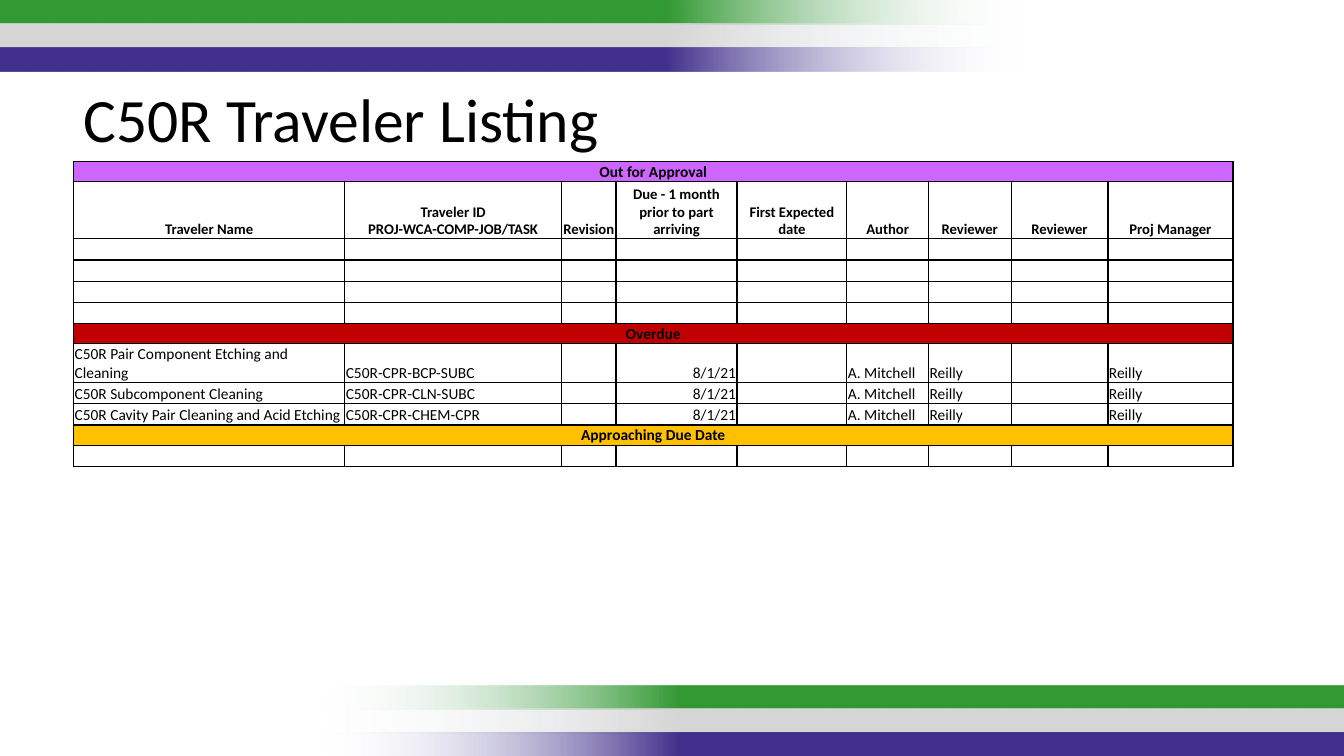
from lxml import etree
from pptx import Presentation
from pptx.dml.color import RGBColor
from pptx.enum import shapes, text
from pptx.oxml import parse_xml
from pptx.oxml.ns import nsdecls, qn
from pptx.util import Inches, Pt

GREEN = RGBColor(0x33, 0x99, 0x33)
GREY = RGBColor(0xD6, 0xD6, 0xD6)
INDIGO = RGBColor(0x42, 0x31, 0x8C)
FADE = RGBColor(0xF7, 0xFA, 0xFD)
BLACK = RGBColor(0, 0, 0)
PURPLE = RGBColor(0xCC, 0x66, 0xFF)
RED = RGBColor(0xC0, 0, 0)
AMBER = RGBColor(0xFF, 0xC0, 0)
FONT = "Calibri"
LEFT, CENTER, RIGHT = text.PP_ALIGN.LEFT, text.PP_ALIGN.CENTER, text.PP_ALIGN.RIGHT
BOTTOM, MIDDLE = text.MSO_ANCHOR.BOTTOM, text.MSO_ANCHOR.MIDDLE

COLUMN_WIDTHS = [2.69, 2.15, 0.54, 1.2, 1.09, 0.81, 0.82, 0.96, 1.24]
DUE_COLUMN = 3
HEADINGS = ["Traveler Name", "Traveler ID\nPROJ-WCA-COMP-JOB/TASK", "Revision",
            "Due - 1 month prior to part arriving", "First Expected date",
            "Author", "Reviewer", "Reviewer", "Proj Manager"]
BLANK = [""] * len(HEADINGS)


def traveler(name, code):
    return [name, code, "", "8/1/21", "", "A. Mitchell", "Reilly", "", "Reilly"]


# Section title, colour, anchor, then (height, cells) of the rows below it
SECTIONS = [
    ("Out for Approval", PURPLE, BOTTOM, [(0.57, HEADINGS)] + [(0.21, BLANK)] * 4),
    ("Overdue", RED, MIDDLE, [
        (0.38, traveler("C50R Pair Component Etching and Cleaning", "C50R-CPR-BCP-SUBC")),
        (0.21, traveler("C50R Subcomponent Cleaning", "C50R-CPR-CLN-SUBC")),
        (0.21, traveler("C50R Cavity Pair Cleaning and Acid Etching", "C50R-CPR-CHEM-CPR"))]),
    ("Approaching Due Date", AMBER, BOTTOM, [(0.21, BLANK)]),
]
SECTION_HEIGHT = 0.2


def add_stripes(slide, left, top, width, rotation):
    """Three stripes that fade out at one end."""
    pitch = 0.235
    for i, color in enumerate((GREEN, GREY, INDIGO)):
        stripe = slide.shapes.add_shape(
            shapes.MSO_SHAPE.RECTANGLE, Inches(left), Inches(top + i * pitch),
            Inches(width), Inches(0.24))
        stripe.rotation = rotation
        stripe.shadow.inherit = False
        stripe.line.fill.background()
        gradient = parse_xml(
            f'<a:gradFill rotWithShape="1" {nsdecls("a")}><a:gsLst>'
            f'<a:gs pos="0"><a:srgbClr val="{FADE}"><a:alpha val="0"/></a:srgbClr></a:gs>'
            f'<a:gs pos="35000"><a:srgbClr val="{color}"/></a:gs>'
            f'<a:gs pos="100000"><a:srgbClr val="{color}"/></a:gs>'
            '</a:gsLst><a:lin ang="0" scaled="0"/></a:gradFill>')
        stripe._element.spPr.find(qn("a:prstGeom")).addnext(gradient)


def style_run(run, size, bold=False):
    run.font.name = FONT
    run.font.size = Pt(size)
    run.font.bold = bold
    run.font.color.rgb = BLACK


def add_title(slide, left, top, width, height):
    title = slide.shapes.title
    title.left, title.top = Inches(left), Inches(top)
    title.width, title.height = Inches(width), Inches(height)
    frame = title.text_frame
    frame.auto_size = text.MSO_AUTO_SIZE.NONE
    frame.vertical_anchor = MIDDLE
    paragraph = frame.paragraphs[0]
    paragraph.alignment = LEFT
    run = paragraph.add_run()
    run.text = "C50R Traveler Listing"
    style_run(run, 44)


def add_borders(cell):
    properties = cell._tc.get_or_add_tcPr()
    for i, side in enumerate(("lnL", "lnR", "lnT", "lnB")):
        properties.insert(i, parse_xml(
            f'<a:{side} w="12700" {nsdecls("a")}><a:solidFill>'
            f'<a:srgbClr val="{BLACK}"/></a:solidFill></a:{side}>'))


def fill_cell(cell, content, align, anchor=BOTTOM, size=11, bold=False, color=None):
    cell.margin_left = cell.margin_right = cell.margin_top = Inches(0.01)
    cell.margin_bottom = 0
    cell.vertical_anchor = anchor
    if color is None:
        cell.fill.background()
    else:
        cell.fill.solid()
        cell.fill.fore_color.rgb = color
    add_borders(cell)
    paragraph = cell.text_frame.paragraphs[0]
    paragraph.alignment = align
    for i, line in enumerate(content.split("\n") if content else []):
        if i:
            paragraph.add_line_break()
        run = paragraph.add_run()
        run.text = line
        style_run(run, size, bold)
    # Keeps blank cells as low as their row
    etree.SubElement(paragraph._p, qn("a:endParaRPr"), sz=str(int(size * 100)))


def add_listing(slide, left, top):
    heights = [h for *_, rows in SECTIONS
               for h in [SECTION_HEIGHT] + [height for height, _ in rows]]
    listing = slide.shapes.add_table(
        len(heights), len(COLUMN_WIDTHS), Inches(left), Inches(top),
        Inches(sum(COLUMN_WIDTHS)), Inches(sum(heights))).table
    listing.first_row = listing.horz_banding = False
    for column, width in zip(listing.columns, COLUMN_WIDTHS):
        column.width = Inches(width)
    for row, height in zip(listing.rows, heights):
        row.height = Inches(height)

    r = 0
    for section, color, anchor, rows in SECTIONS:
        # Section band across all columns
        for c in range(len(COLUMN_WIDTHS)):
            fill_cell(listing.cell(r, c), "" if c else section, CENTER, anchor,
                      bold=True, color=color)
        listing.cell(r, 0).merge(listing.cell(r, len(COLUMN_WIDTHS) - 1))
        r += 1
        # Heading and traveler rows
        for _, cells in rows:
            heading = cells is HEADINGS
            for c, content in enumerate(cells):
                align = CENTER if heading else RIGHT if c == DUE_COLUMN else LEFT
                fill_cell(listing.cell(r, c), content, align,
                          size=10.5 if heading else 11, bold=heading)
            r += 1


def main():
    prs = Presentation()
    prs.slide_width, prs.slide_height = Inches(13.33), Inches(7.5)
    slide = prs.slides.add_slide(prs.slide_layouts[5])
    add_stripes(slide, -0.01, 0, 10.17, 180)
    add_stripes(slide, 3.18, 6.8, 10.17, 0)
    add_listing(slide, 0.73, 1.6)
    add_title(slide, 0.73, 0.75, 10.31, 0.84)
    prs.save("out.pptx")


if __name__ == "__main__":
    main()
